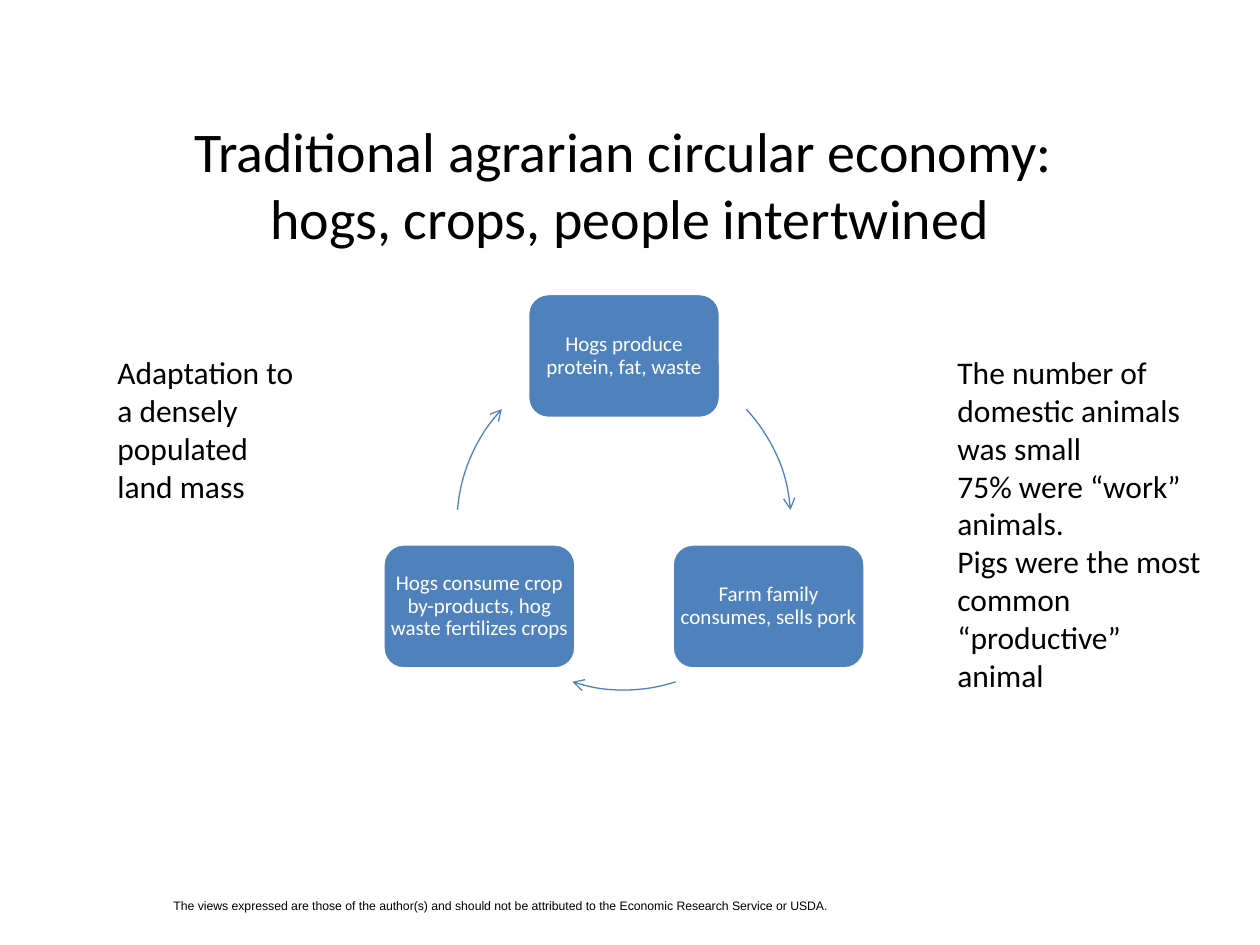
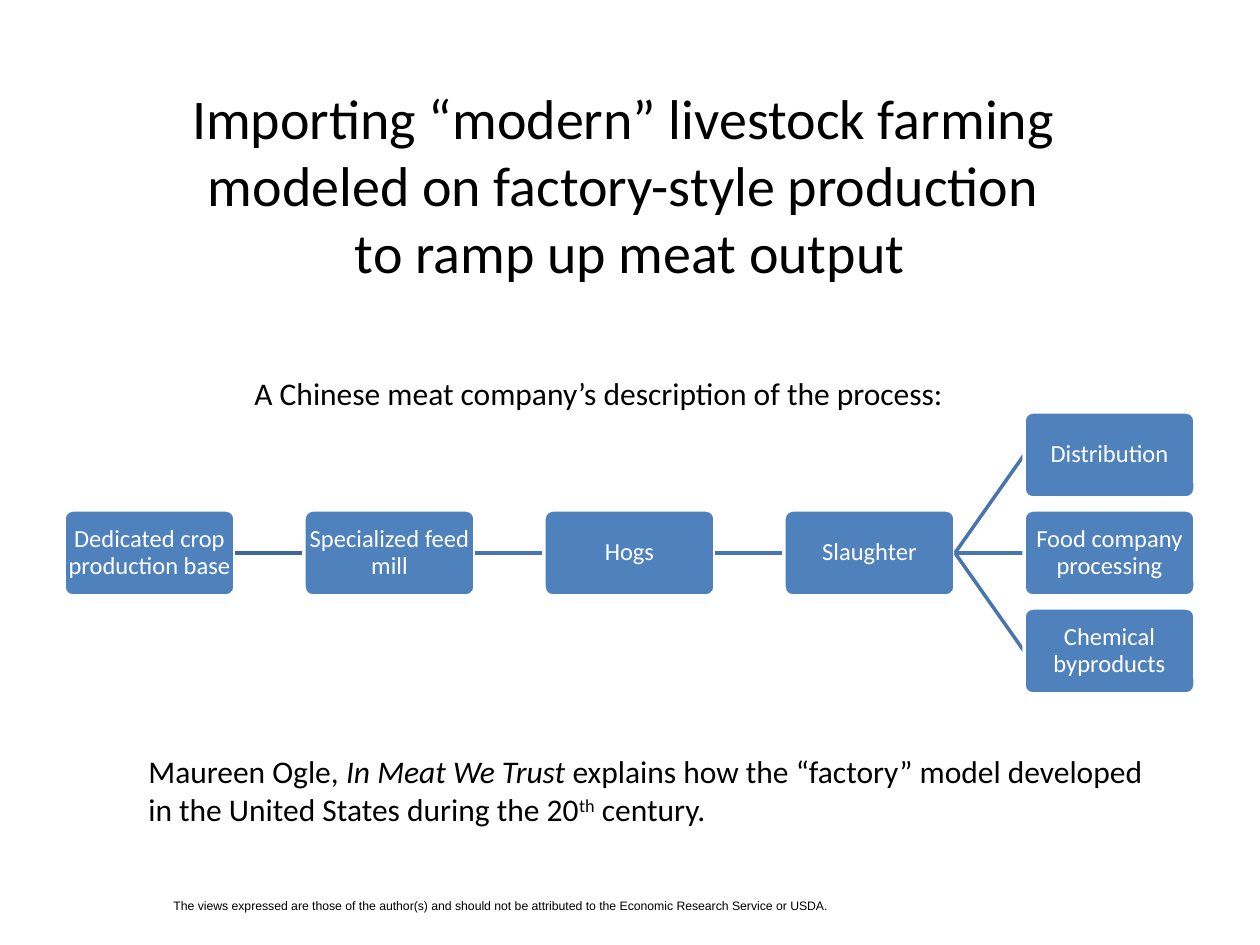
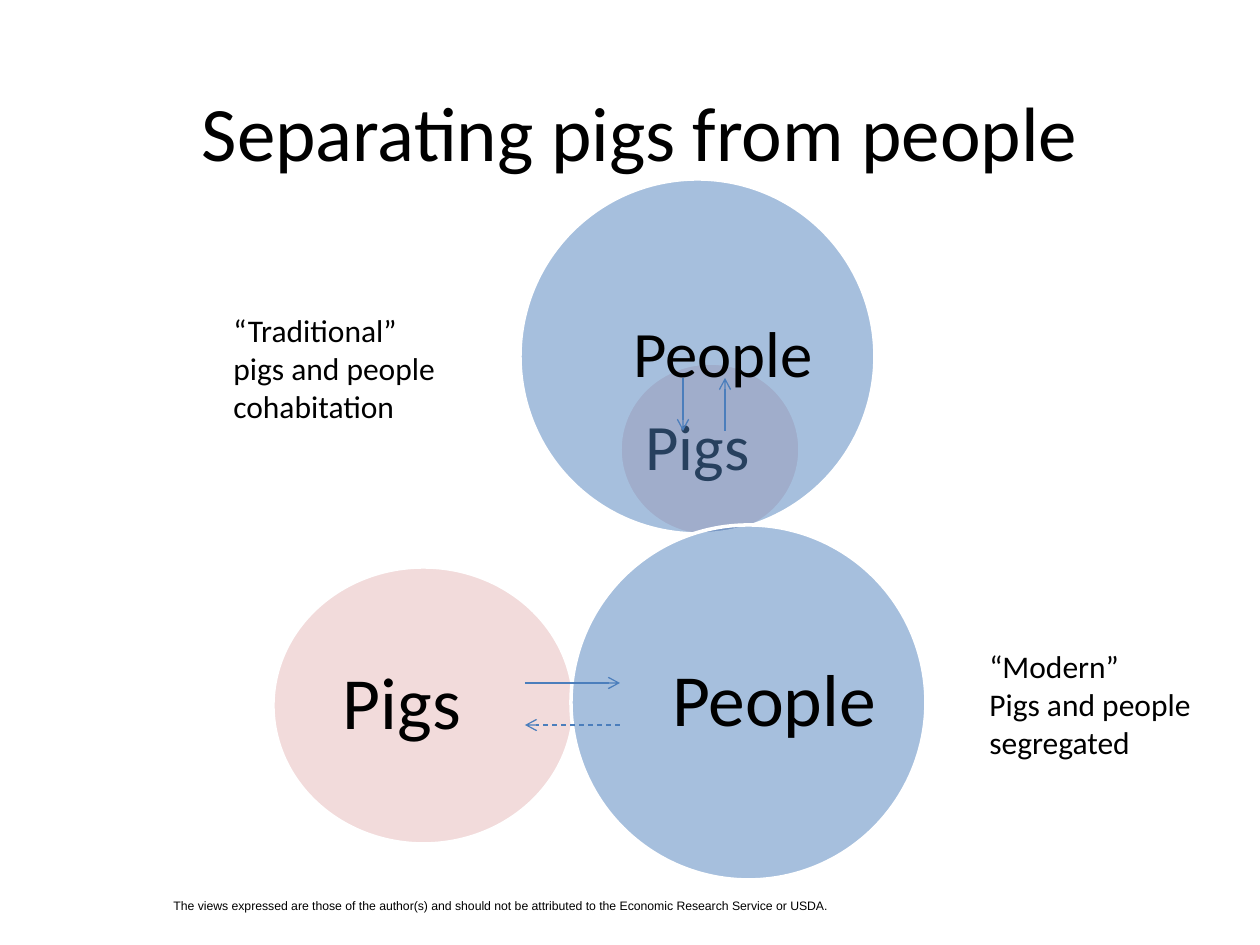
import math
import pptx
import pptx.util
import pptx.dml.color
import pptx.enum.dml
import pptx.enum.shapes
import pptx.enum.text
import pptx.oxml.xmlchemy
import pptx.oxml.ns
import lxml.etree

PX = 914400 / 126
BLACK = pptx.dml.color.RGBColor(0x00, 0x00, 0x00)
WHITE = pptx.dml.color.RGBColor(0xFF, 0xFF, 0xFF)
BLUE = pptx.dml.color.RGBColor(0x4F, 0x81, 0xBD)
PINK = pptx.dml.color.RGBColor(0xE6, 0xB9, 0xB8)
ARROW_BLUE = pptx.dml.color.RGBColor(0x4B, 0x7E, 0xBC)
LINK_BLUE = pptx.dml.color.RGBColor(0x48, 0x75, 0xAC)
FIRST_LINK_BLUE = pptx.dml.color.RGBColor(0x3F, 0x67, 0x97)
SHAPE = pptx.enum.shapes.MSO_SHAPE
ALIGN = pptx.enum.text.PP_ALIGN
ANCHOR = pptx.enum.text.MSO_ANCHOR
FOOTER = ("The views expressed are those of the author(s) and should not be "
          "attributed to the Economic Research Service or USDA.")


def add_box(page, rect, text, size=18, centred=False, wrap=False, font="Calibri",
            inset=None, spacing=None, kind=None, fill=BLUE):
    place = [round(value * PX) for value in rect]
    if kind is None:
        box = page.shapes.add_textbox(*place)
    else:
        box = page.shapes.add_shape(kind, *place)
        box.shadow.inherit = False
        box.fill.solid()
        box.fill.fore_color.rgb = fill
        box.line.color.rgb = WHITE
        box.line.width = pptx.util.Pt(2)
    frame = box.text_frame
    frame.word_wrap = wrap
    frame.vertical_anchor = ANCHOR.MIDDLE if centred else ANCHOR.TOP
    if inset is not None:
        frame.margin_left = frame.margin_right = inset
        frame.margin_top = frame.margin_bottom = inset
    frame.text = text
    for para in frame.paragraphs:
        para.alignment = ALIGN.CENTER if centred else ALIGN.LEFT
        para.line_spacing = spacing
        for span in para.runs:
            span.font.name = font
            span.font.size = pptx.util.Pt(size)
            span.font.color.rgb = WHITE if kind else BLACK
    return box


def add_line(page, ends, colour, width):
    line = page.shapes.add_connector(pptx.enum.shapes.MSO_CONNECTOR.STRAIGHT,
                                     *[round(value * PX) for value in ends])
    line.line.color.rgb = colour
    line.line.width = pptx.util.Pt(width)
    lxml.etree.SubElement(line._element.spPr, pptx.oxml.ns.qn("a:effectLst"))
    return line


deck = pptx.Presentation()
deck.slide_width = round(1260 * PX)
deck.slide_height = round(945 * PX)
titles = [
    ("Traditional agrarian circular economy: \vhogs, crops, people intertwined", 63, 126, 32),
    ("Importing “modern” livestock farming \vmodeled on factory-style production \v"
     "to ramp up meat output", 63, 126, 32),
    ("Separating pigs from people", 73, 73, 44),
]
pages = []
for title, left, top, size in titles:
    page = deck.slides.add_slide(deck.slide_layouts[6])
    add_box(page, (161, 892, 701, 28), FOOTER, 7, wrap=True, font="Arial")
    add_box(page, (left, top, 1134, 116), title, size, centred=True, wrap=True)
    pages.append(page)
cycle_page, chain_page, circles_page = pages
arrows = []

CENTRE_X, CENTRE_Y, RADIUS = 624, 523, 167
NODE_WIDTH, NODE_HEIGHT = 193, 125
cycle = [
    ("Hogs produce protein, fat, waste", -90, 317, 355.5),
    ("Farm family consumes, sells pork", 30, 72, 108),
    ("Hogs consume crop by-products, hog waste fertilizes crops", 150, 184.5, 223),
]
for text, angle, arc_start, arc_end in cycle:
    node_x = CENTRE_X + RADIUS * math.cos(math.radians(angle))
    node_y = CENTRE_Y + RADIUS * math.sin(math.radians(angle))
    add_box(cycle_page,
            (node_x - NODE_WIDTH / 2, node_y - NODE_HEIGHT / 2, NODE_WIDTH, NODE_HEIGHT),
            text, 12, centred=True, wrap=True, inset=0, spacing=0.9,
            kind=SHAPE.ROUNDED_RECTANGLE)
    ring = (CENTRE_X - RADIUS, CENTRE_Y - RADIUS, 2 * RADIUS, 2 * RADIUS)
    arc = cycle_page.shapes.add_shape(SHAPE.ARC, *[round(value * PX) for value in ring])
    arc.adjustments[0] = arc_start * 0.6
    arc.adjustments[1] = arc_end * 0.6
    arc.shadow.inherit = False
    arc.fill.background()
    arc.line.color.rgb = BLUE
    arc.line.width = pptx.util.Pt(0.75)
    arrows.append(arc)

add_box(cycle_page, (105, 347, 203, 165), "Adaptation to\na densely\npopulated\nland mass")
add_box(cycle_page, (945, 347, 271, 357),
        "The number of\ndomestic animals\nwas small\n75% were “work”\nanimals.\n"
        "Pigs were the most\ncommon\n“productive”\nanimal")

STEP_X, STEP_Y = 240, 98
STAGE_WIDTH, STAGE_HEIGHT = 171, 86
stages = [
    ("Dedicated crop production base", 0, 0),
    ("Specialized feed mill", 1, 0),
    ("Hogs", 2, 0),
    ("Slaughter", 3, 0),
    ("Distribution", 4, -1),
    ("Food company processing", 4, 0),
    ("Chemical byproducts", 4, 1),
]
for text, column, row in stages:
    left, middle = 64 + column * STEP_X, 553 + row * STEP_Y
    if column:
        add_line(chain_page, (left - STEP_X + STAGE_WIDTH, 553, left, middle),
                 FIRST_LINK_BLUE if column == 1 else LINK_BLUE, 2)
    stage = add_box(chain_page, (left, middle - STAGE_HEIGHT / 2, STAGE_WIDTH, STAGE_HEIGHT),
                    text, 14, centred=True, wrap=True, inset=0, spacing=0.9,
                    kind=SHAPE.ROUNDED_RECTANGLE)
    stage.adjustments[0] = 0.1

add_box(chain_page, (242, 368, 723, 50), "A Chinese meat company’s description of the process:")
book = add_box(chain_page, (136, 746, 1032, 89),
               "Maureen Ogle, \nin the United States during the 20")
endings = [
    ("In Meat We Trust ", "explains how the “factory” model developed"),
    ("th", " century."),
]
for para, texts in zip(book.text_frame.paragraphs, endings):
    for text in texts:
        span = para.add_run()
        span.text = text
        span.font.name = "Calibri"
        span.font.size = pptx.util.Pt(18)
        span.font.color.rgb = BLACK
first, second = book.text_frame.paragraphs
first.runs[1].font.italic = True
second.runs[1]._r.get_or_add_rPr().set("baseline", "30000")

circles = [
    ("Pigs", 37, PINK, (620, 363, 180, 173), (645, 383, 105, 132)),
    ("People", 37, BLUE, (520, 179, 355, 355), (621, 221, 204, 271)),
    ("Pigs", 42, PINK, (273, 567, 301, 277), (315, 600, 174, 212)),
    ("People", 42, BLUE, (571, 525, 355, 355), (672, 567, 204, 271)),
]
for text, size, colour, outline, label in circles:
    circle = add_box(circles_page, outline, "", kind=SHAPE.OVAL, fill=colour)
    tint = circle._element.spPr.find(pptx.oxml.ns.qn("a:solidFill"))[0]
    lxml.etree.SubElement(tint, pptx.oxml.ns.qn("a:alpha")).set("val", "50000")
    add_box(circles_page, label, text, size, centred=True, wrap=True, inset=0, spacing=0.9)

flows = [(683, 378, 683, 431), (725, 431, 725, 378), (525, 683, 620, 683), (620, 725, 525, 725)]
for ends in flows:
    arrows.append(add_line(circles_page, ends, ARROW_BLUE, 0.75))
arrows[-1].line.dash_style = pptx.enum.dml.MSO_LINE.DASH

add_box(circles_page, (221, 305, 229, 127), "“Traditional”\npigs and people\ncohabitation")
add_box(circles_page, (977, 641, 229, 127), "“Modern”\nPigs and people\nsegregated")

for arrow in arrows:
    outline = arrow.line._get_or_add_ln()
    lxml.etree.SubElement(outline, pptx.oxml.ns.qn("a:tailEnd")).set("type", "arrow")

deck.save("out.pptx")
